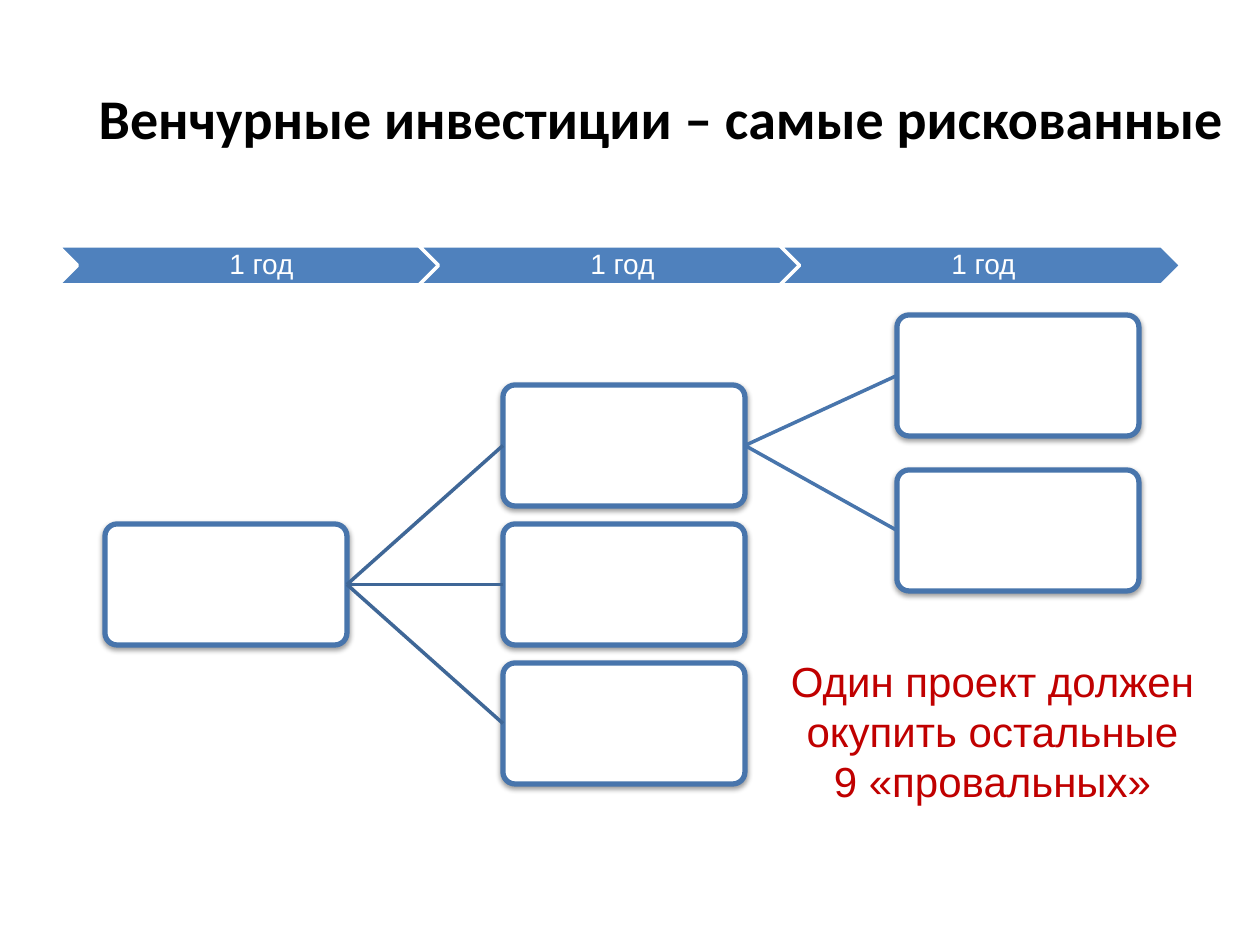
import pptx
import pptx.dml.color
import pptx.enum.shapes
import pptx.enum.text
import pptx.oxml
import pptx.oxml.ns
import pptx.util

PX = 914400 // 126  # EMU per px
COLORS = {
    "title": "000000",
    "white": "FFFFFF",
    "chevron": "4F81BD",
    "branch": "4875AC",
    "first_branch": "3F6797",
    "accent": "C00000",
}
BOX_WIDTH, BOX_HEIGHT = 242, 121
NAMESPACE = pptx.oxml.ns.nsdecls("a")
NO_EFFECTS = f"<a:effectLst {NAMESPACE}/>"
SHADOW = (
    f'<a:outerShdw {NAMESPACE} blurRad="40000" dist="20000" '
    'dir="5400000" rotWithShape="0"><a:srgbClr val="000000">'
    '<a:alpha val="38000"/></a:srgbClr></a:outerShdw>'
)
SHAPES = pptx.enum.shapes.MSO_SHAPE
ANCHOR = pptx.enum.text.MSO_ANCHOR


def color(name):
    return pptx.dml.color.RGBColor.from_string(COLORS[name])


def lengths(*values):
    return [value * PX for value in values]


def write(shape, text, size, font, color_name, bold=False):
    frame = shape.text_frame
    frame.word_wrap = True
    para = frame.paragraphs[0]
    para.text = text
    para.alignment = pptx.enum.text.PP_ALIGN.CENTER
    para.font.size = pptx.util.Pt(size)
    para.font.name = font
    para.font.bold = bold
    para.font.color.rgb = color(color_name)
    return frame


def add_title(page, text):
    title = page.shapes.title
    title.left, title.top, title.width, title.height = lengths(63, 38, 1197, 158)
    frame = write(title, text, 32, "Calibri", "title", bold=True)
    frame.auto_size = pptx.enum.text.MSO_AUTO_SIZE.NONE
    frame.vertical_anchor = ANCHOR.MIDDLE


def add_shape(page, kind, bounds, fill, line, line_width):
    shape = page.shapes.add_shape(kind, *lengths(*bounds))
    shape.shadow.inherit = False
    shape.fill.solid()
    shape.fill.fore_color.rgb = color(fill)
    shape.line.color.rgb = color(line)
    shape.line.width = pptx.util.Pt(line_width)
    return shape


def add_box(page, left, top):
    bounds = (left, top, BOX_WIDTH, BOX_HEIGHT)
    box = add_shape(page, SHAPES.ROUNDED_RECTANGLE, bounds, "white", "branch", 3)
    box.adjustments[0] = 0.1
    effects = box._element.spPr.find(pptx.oxml.ns.qn("a:effectLst"))
    effects.append(pptx.oxml.parse_xml(SHADOW))
    return box


def add_branch(page, parent, child, color_name):
    straight = pptx.enum.shapes.MSO_CONNECTOR.STRAIGHT
    branch = page.shapes.add_connector(straight, 0, 0, 0, 0)
    branch.begin_connect(parent, 3)  # right side
    branch.end_connect(child, 1)  # left side
    branch.line.color.rgb = color(color_name)
    branch.line.width = pptx.util.Pt(2)
    branch._element.spPr.append(pptx.oxml.parse_xml(NO_EFFECTS))


def add_year(page, left, text):
    bounds = (left, 246, 401, 39)
    year = add_shape(page, SHAPES.CHEVRON, bounds, "chevron", "white", 2)
    frame = write(year, text, 16, "Arial", "white")
    frame.vertical_anchor = ANCHOR.MIDDLE
    frame.margin_left = 9 * PX
    frame.margin_top = frame.margin_right = frame.margin_bottom = 3 * PX
    frame.paragraphs[0].line_spacing = 0.9


def add_note(page, text):
    note = page.shapes.add_textbox(*lengths(776, 649, 433, 165))
    write(note, text, 24, "Arial", "accent")


def main():
    deck = pptx.Presentation()
    deck.slide_width, deck.slide_height = lengths(1260, 945)
    page = deck.slides.add_slide(deck.slide_layouts[5])
    add_title(page, "Венчурные инвестиции – самые рискованные")

    # Tree of projects, one column per year
    root = add_box(page, 105, 524)
    second_year = [add_box(page, 503, 524 + 139 * step) for step in (-1, 0, 1)]
    third_year = [add_box(page, 897, top) for top in (315, 470)]
    for child in second_year:
        add_branch(page, root, child, "first_branch")
    for child in third_year:
        add_branch(page, second_year[0], child, "branch")

    # Timeline
    for index in range(3):
        add_year(page, 58 + 361 * index, "1 год")

    # Conclusion
    add_note(page, "Один проект должен окупить остальные\v9 «провальных»")
    deck.save("out.pptx")


if __name__ == "__main__":
    main()
